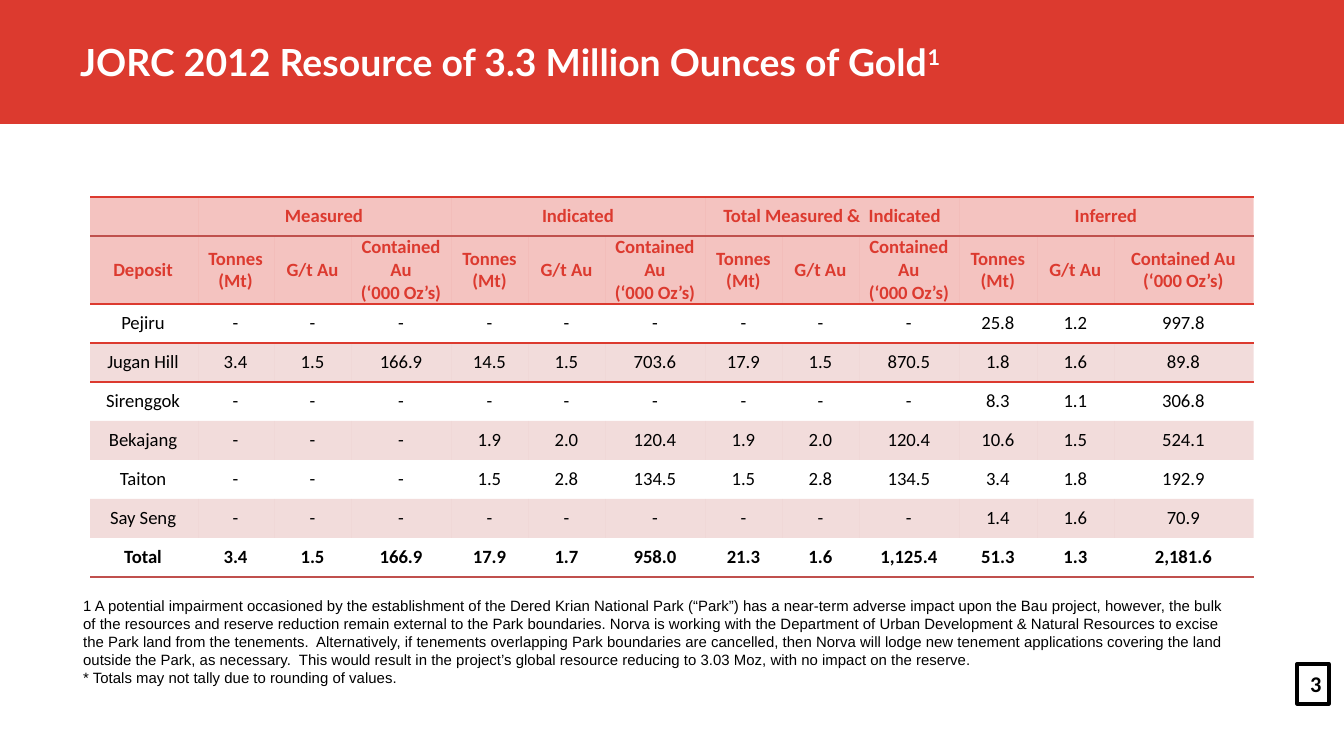
import lxml.etree
import pptx
import pptx.dml.color
import pptx.enum.text
import pptx.oxml.ns
import pptx.util

EMU_PER_PX = 914400 / 134.4  # 1344 px across ten inches

RED = pptx.dml.color.RGBColor(0xDC, 0x3A, 0x2F)
BRICK = pptx.dml.color.RGBColor(0xC0, 0x50, 0x4D)
WHITE = pptx.dml.color.RGBColor(0xFF, 0xFF, 0xFF)
BLACK = pptx.dml.color.RGBColor(0x00, 0x00, 0x00)

MIDDLE = pptx.enum.text.MSO_ANCHOR.MIDDLE
CENTER = pptx.enum.text.PP_ALIGN.CENTER
NO_STYLE = "{2D5ABB26-0587-4C30-8999-92F81FD0307C}"

GROUPS = ["Measured", "Indicated", "Total Measured &  Indicated", "Inferred"]
MEASURES = ["Tonnes (Mt)", "G/t Au", "Contained Au\n(‘000 Oz’s)"]
NONE = ["-"] * 3
DEPOSITS = [
    ["Pejiru", *NONE, *NONE, *NONE, "25.8", "1.2", "997.8"],
    ["Jugan Hill", "3.4", "1.5", "166.9", "14.5", "1.5", "703.6",
     "17.9", "1.5", "870.5", "1.8", "1.6", "89.8"],
    ["Sirenggok", *NONE, *NONE, *NONE, "8.3", "1.1", "306.8"],
    ["Bekajang", *NONE, "1.9", "2.0", "120.4",
     "1.9", "2.0", "120.4", "10.6", "1.5", "524.1"],
    ["Taiton", *NONE, "1.5", "2.8", "134.5",
     "1.5", "2.8", "134.5", "3.4", "1.8", "192.9"],
    ["Say Seng", *NONE, *NONE, *NONE, "1.4", "1.6", "70.9"],
    ["Total", "3.4", "1.5", "166.9", "17.9", "1.7", "958.0",
     "21.3", "1.6", "1,125.4", "51.3", "1.3", "2,181.6"],
]
COLUMN_WIDTHS = [108] + [77, 77, 100] * 3 + [78, 77, 139]
ROW_HEIGHTS = [39, 68] + [39] * len(DEPOSITS)

# Row number: colour of the line above or below it
TOP_LINES = {0: RED, 1: BRICK, 2: RED, 3: RED}
BOTTOM_LINES = {0: BRICK, 1: RED, 2: RED, 8: BRICK}

NOTES = (
    "1 A potential impairment occasioned by the establishment of the Dered Krian "
    "National Park (“Park”) has a near-term adverse impact upon the Bau project, "
    "however, the bulk of the resources and reserve reduction remain external to "
    "the Park boundaries. Norva is working with the Department of Urban Development "
    "& Natural Resources to excise the Park land from the tenements.  Alternatively, "
    "if tenements overlapping Park boundaries are cancelled, then Norva will lodge "
    "new tenement applications covering the land  outside the Park, as necessary.  "
    "This would result in the project’s global resource reducing to 3.03 Moz, with "
    "no impact on the reserve.\n"
    "* Totals may not tally due to rounding of values."
)


def px(length):
    return pptx.util.Emu(round(length * EMU_PER_PX))


def style_text(frame, font, size, color, bold=False):
    for para in frame.paragraphs:
        for span in para.runs:
            span.font.name = font
            span.font.size = pptx.util.Pt(size)
            span.font.color.rgb = color
            span.font.bold = bold


def add_text(page, left, top, width, height, text, font, size, color, bold=False):
    box = page.shapes.add_textbox(px(left), px(top), px(width), px(height))
    box.text_frame.word_wrap = True
    box.text_frame.text = text
    style_text(box.text_frame, font, size, color, bold)
    return box


def add_band(page):
    band = page.shapes.add_shape(
        pptx.enum.shapes.MSO_SHAPE.RECTANGLE, 0, 0, px(1344), px(124))
    band.shadow.inherit = False
    band.fill.solid()
    band.fill.fore_color.rgb = RED
    band.line.fill.background()


def add_title(page):
    box = add_text(page, 67, -1, 1210, 126,
                   "JORC 2012 Resource of 3.3 Million Ounces of Gold",
                   "Lato", 20, WHITE, True)
    box.text_frame.vertical_anchor = MIDDLE
    mark = box.text_frame.paragraphs[0].add_run()
    mark.text = "1"
    style_text(box.text_frame, "Lato", 20, WHITE, True)
    mark.font._element.set("baseline", "30000")


def add_border(cell, side, color):
    """Draw one side of a cell; lines come before the fill in the XML."""
    line = lxml.etree.Element(pptx.oxml.ns.qn("a:" + side), w="12700")
    fill = lxml.etree.SubElement(line, pptx.oxml.ns.qn("a:solidFill"))
    lxml.etree.SubElement(fill, pptx.oxml.ns.qn("a:srgbClr"), val=str(color))
    cell._tc.get_or_add_tcPr().insert(0, line)


def tint_cell(cell, color, percent):
    cell.fill.solid()
    cell.fill.fore_color.rgb = color
    tone = cell._tc.tcPr.find(".//" + pptx.oxml.ns.qn("a:srgbClr"))
    lxml.etree.SubElement(tone, pptx.oxml.ns.qn("a:alpha"), val=str(percent * 1000))


def fill_cell(cell, row, text):
    header = row < 2
    cell.margin_left, cell.margin_right = px(3), px(5)
    cell.margin_top = cell.margin_bottom = 0
    cell.vertical_anchor = MIDDLE
    cell.text_frame.text = text
    for para in cell.text_frame.paragraphs:
        para.alignment = CENTER
        para.font.size = pptx.util.Pt(10)
    style_text(cell.text_frame, "Calibri", 10, RED if header else BLACK,
               header or text_is_total(row))

    if header:
        tint_cell(cell, RED, 30)
    elif row % 2 == 1:
        tint_cell(cell, BRICK, 20)
    else:
        cell.fill.background()

    if row in BOTTOM_LINES:
        add_border(cell, "lnB", BOTTOM_LINES[row])
    if row in TOP_LINES:
        add_border(cell, "lnT", TOP_LINES[row])


def text_is_total(row):
    return row == len(ROW_HEIGHTS) - 1


def add_resource_table(page):
    group_row = [""]
    for group in GROUPS:
        group_row += [group, "", ""]
    rows = [group_row, ["Deposit"] + MEASURES * len(GROUPS)] + DEPOSITS

    frame = page.shapes.add_table(
        len(rows), len(COLUMN_WIDTHS), px(90), px(197),
        px(sum(COLUMN_WIDTHS)), px(sum(ROW_HEIGHTS)))
    table = frame.table
    table._tbl.tblPr.find(pptx.oxml.ns.qn("a:tableStyleId")).text = NO_STYLE
    table.horz_banding = False
    for column, width in zip(table.columns, COLUMN_WIDTHS):
        column.width = px(width)
    for line, height in zip(table.rows, ROW_HEIGHTS):
        line.height = px(height)

    for row, texts in enumerate(rows):
        for column, text in enumerate(texts):
            fill_cell(table.cell(row, column), row, text)
    for first in range(1, len(COLUMN_WIDTHS), 3):
        table.cell(0, first).merge(table.cell(0, first + 2))


def add_page_number(page):
    box = add_text(page, 1297, 664, 32, 40, "3", "Calibri", 12, BLACK, True)
    box.line.color.rgb = BLACK
    box.line.width = pptx.util.Pt(1.75)


def main():
    deck = pptx.Presentation()
    deck.slide_width, deck.slide_height = px(1344), px(756)
    page = deck.slides.add_slide(deck.slide_layouts[6])

    # Heading
    add_band(page)
    add_title(page)

    # Resources by deposit, with notes below
    add_text(page, 70, 590, 1173, 103, NOTES, "Arial", 8, BLACK)
    add_resource_table(page)

    add_page_number(page)
    deck.save("out.pptx")


if __name__ == "__main__":
    main()
